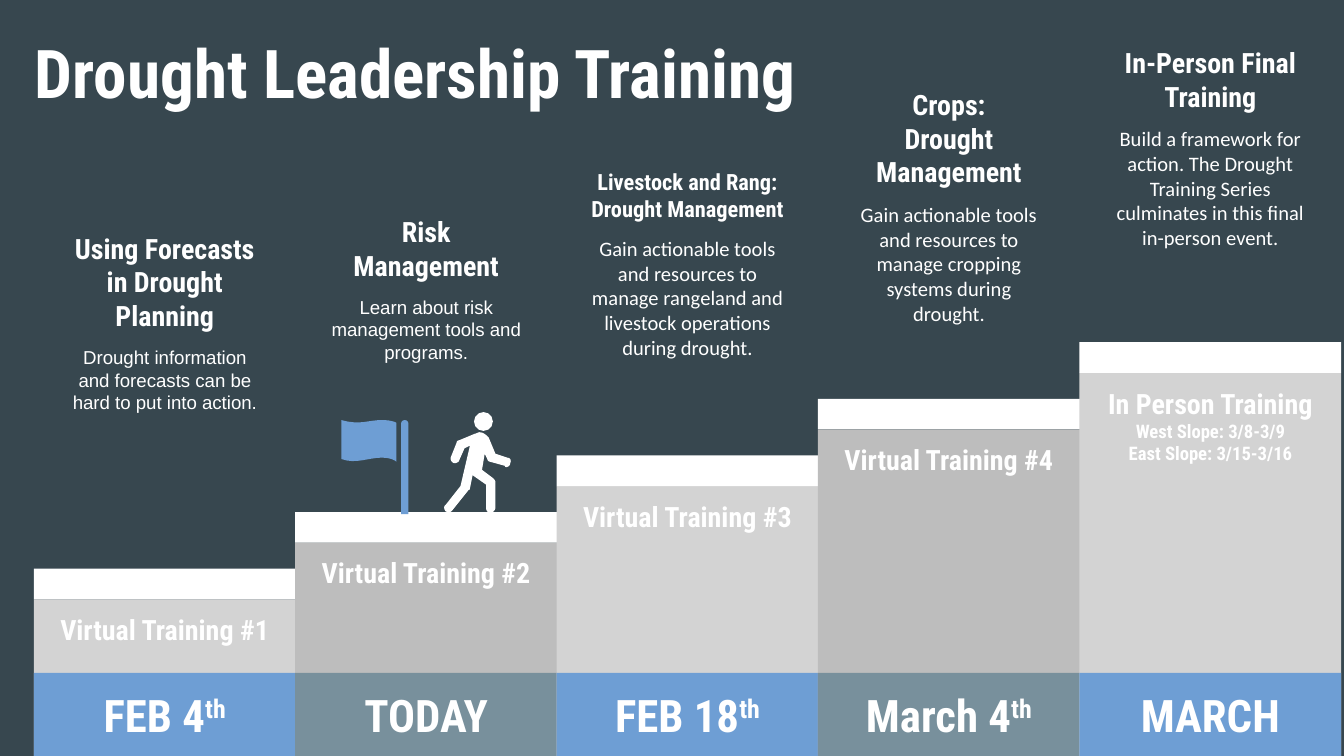
from pptx import Presentation
from pptx import util as u
from pptx.dml.color import RGBColor
from pptx.enum import shapes, text

Cm, Pt = u.Cm, u.Pt
SLATE = RGBColor(0x37, 0x47, 0x4F)
WHITE = RGBColor(0xFF, 0xFF, 0xFF)
LIGHT = RGBColor(0xD3, 0xD3, 0xD3)
GREY = RGBColor(0xBD, 0xBD, 0xBD)
BLUE = RGBColor(0x6E, 0x9E, 0xD4)
TEAL = RGBColor(0x78, 0x90, 0x9C)
ROBOTO = "Roboto Condensed"
RECT = shapes.MSO_SHAPE.RECTANGLE
TOP, MIDDLE, BOTTOM = (text.MSO_ANCHOR.TOP, text.MSO_ANCHOR.MIDDLE,
                       text.MSO_ANCHOR.BOTTOM)

# Staircase measures, in cm
SLIDE_W, SLIDE_H = 25.4, 14.29
LEFT, PITCH, STEP_W = 0.64, 4.94, 4.95
FIRST_TOP, RISE, CAP_H = 10.75, 1.07, 0.58
DATE_TOP = 12.72
CAPTION_INSET, CAPTION_W = 0.62, 3.71
HEAD_H, BODY_H = 0.93, 1.78

# Label lines, date, date suffix, heading top, heading lines, heading size,
# body, body font, body size
STEPS = [
    (["Virtual Training #1"], "FEB 4", "th", 5.48,
     ["Using Forecasts in Drought Planning"], 15,
     "Drought information and forecasts can be hard to put into action.",
     "Arial", 10),
    (["Virtual Training #2"], "TODAY", "", 4.53, ["Risk Management"], 15,
     "Learn about risk management tools and programs.", "Arial", 10),
    (["Virtual Training #3"], "FEB 18", "th", 3.4,
     ["Livestock and Rang:", "Drought Management"], 12,
     "Gain actionable tools and resources to manage rangeland and "
     "livestock operations during drought.", "Calibri", 11),
    (["Virtual Training #4"], "March 4", "th", 2.76,
     ["Crops:", "Drought Management"], 15,
     "Gain actionable tools and resources to manage cropping systems "
     "during drought.", "Calibri", 11),
    (["In Person Training", "West Slope: 3/8-3/9", "East Slope: 3/15-3/16"],
     "MARCH", "", 1.33, ["In-Person Final Training"], 15,
     "Build a framework for action. The Drought Training Series culminates "
     "in this final in-person event.", "Calibri", 11),
]

# Outlines on a 50-unit-wide grid: pairs are lines, sextuples are Bézier curves
WALKER = [
    (47, 34), (38, 31), (33, 19), (31, 17, 29, 15, 26, 15),
    (25, 15, 24, 16, 23, 16), (11, 21), (10, 21, 9, 22, 9, 23), (5, 33),
    (4, 35, 5, 37, 7, 38), (8, 38), (9, 38, 11, 37, 11, 36), (15, 27),
    (19, 25), (12, 55), (1, 69), (-1, 70, 0, 73, 1, 74),
    (2, 74, 2, 75, 3, 75), (4, 75, 5, 74, 6, 73), (18, 58),
    (19, 58, 19, 57, 19, 57), (21, 47), (31, 54), (31, 71),
    (31, 73, 32, 75, 34, 75), (36, 75, 38, 73, 38, 71), (38, 52),
    (38, 51, 37, 50, 36, 49), (28, 43), (30, 31), (32, 35),
    (32, 36, 33, 37, 34, 37), (45, 40), (45, 40, 45, 41, 46, 41),
    (47, 41, 49, 40, 49, 38), (50, 36, 49, 34, 47, 34),
]
CLOTH = [
    (30, 0), (38, 0, 41, 2, 41, 2), (41, 31), (41, 31, 38, 28, 30, 28),
    (20, 28, 11, 33, 0, 29), (0, 0), (14, 4, 20, 0, 30, 0),
]


def paint(sp, color):
    sp.shadow.inherit = False
    sp.fill.solid()
    sp.fill.fore_color.rgb = color
    sp.line.fill.background()


def add_block(parent, box, color, kind=RECT):
    sp = parent.add_shape(kind, *(Cm(v) for v in box))
    paint(sp, color)
    return sp


def set_frame(tf, anchor, side=0.25, top=0.13):
    tf.word_wrap = True
    tf.auto_size = text.MSO_AUTO_SIZE.NONE
    tf.vertical_anchor = anchor
    tf.margin_left = tf.margin_right = Cm(side)
    tf.margin_top, tf.margin_bottom = Cm(top), Cm(0.13)


def add_run(p, words, size, font=ROBOTO, bold=True):
    r = p.add_run()
    r.text = words
    r.font.size, r.font.name, r.font.bold = Pt(size), font, bold
    r.font.color.rgb = WHITE
    return r


def add_lines(tf, lines, sizes, font=ROBOTO, bold=True):
    for i, (line, size) in enumerate(zip(lines, sizes)):
        p = tf.add_paragraph() if i else tf.paragraphs[0]
        p.alignment = text.PP_ALIGN.CENTER
        add_run(p, line, size, font, bold)


def add_outline(parent, x, y, unit, outline, color):
    """Draw an outline, with each curve sampled as short segments."""
    points = [outline[0]]
    for seg in outline[1:]:
        if len(seg) == 2:
            points.append(seg)
            continue
        ctrl = [points[-1], seg[:2], seg[2:4], seg[4:]]
        for t in (k / 8 for k in range(1, 9)):
            weights = ((1 - t)**3, 3 * t * (1 - t)**2, 3 * t * t * (1 - t), t**3)
            points.append(tuple(sum(w * c[axis] for w, c in zip(weights, ctrl))
                                for axis in (0, 1)))
    points = [(Cm(x + px * unit), Cm(y + py * unit)) for px, py in points]
    fb = parent.build_freeform(*points[0])
    fb.add_line_segments(points[1:], close=True)
    paint(fb.convert_to_shape(), color)


def add_title(s, box):
    sp = s.shapes.title
    sp.left, sp.top, sp.width, sp.height = (Cm(v) for v in box)
    tf = sp.text_frame
    set_frame(tf, TOP)
    tf.margin_right = 0
    p = tf.paragraphs[0]
    p.alignment, p.line_spacing = text.PP_ALIGN.LEFT, 0.9
    add_run(p, "Drought Leadership Training", 36)


def add_step(s, x, top, labels, date, suffix, block_color, date_color):
    # Block with its label
    block_top = top + CAP_H
    sp = add_block(s.shapes, (x, block_top, STEP_W, SLIDE_H - block_top), block_color)
    set_frame(sp.text_frame, TOP, top=0.25)
    add_lines(sp.text_frame, labels, (15, 10, 10))
    # White tread
    add_block(s.shapes, (x, top, STEP_W, CAP_H), WHITE)
    # Date bar
    sp = add_block(s.shapes, (x, DATE_TOP, STEP_W, SLIDE_H - DATE_TOP), date_color)
    set_frame(sp.text_frame, MIDDLE)
    add_lines(sp.text_frame, [date], [24])
    if suffix:
        r = add_run(sp.text_frame.paragraphs[0], suffix, 24)
        r.font._element.set("baseline", "30000")


def add_caption(s, x, top, heading, head_size, body, font, body_size):
    group = s.shapes.add_group_shape().shapes
    for y, h, anchor, lines, size, face, bold in (
            (top, HEAD_H, BOTTOM, heading, head_size, ROBOTO, True),
            (top + HEAD_H, BODY_H, TOP, [body], body_size, font, False)):
        tf = group.add_textbox(Cm(x), Cm(y), Cm(CAPTION_W), Cm(h)).text_frame
        set_frame(tf, anchor, side=0)
        add_lines(tf, lines, [size] * len(lines), face, bold)


def add_walker(s, x, y, w):
    unit = w / 50
    group = s.shapes.add_group_shape().shapes
    add_block(group, (x + 22 * unit, y, 14 * unit, 14 * unit), WHITE,
              shapes.MSO_SHAPE.OVAL)
    add_outline(group, x, y, unit, WALKER, WHITE)


def add_flag(s, x, y, w):
    unit = w / 50
    group = s.shapes.add_group_shape().shapes
    pole = add_block(group, (x + 44.5 * unit, y, 5.5 * unit, 70 * unit), BLUE,
                     shapes.MSO_SHAPE.ROUND_2_SAME_RECTANGLE)
    pole.adjustments[0] = 0.5
    add_outline(group, x, y, unit, CLOTH, BLUE)


def main():
    prs = Presentation()
    prs.slide_width, prs.slide_height = Cm(SLIDE_W), Cm(SLIDE_H)
    s = prs.slides.add_slide(prs.slide_layouts[5])
    s.background.fill.solid()
    s.background.fill.fore_color.rgb = SLATE
    add_title(s, (0.41, 0.64, 15.32, 1.73))
    for i, (labels, date, suffix, head_top, *caption) in enumerate(STEPS):
        x = LEFT + i * PITCH
        colors = (GREY, TEAL) if i % 2 else (LIGHT, BLUE)
        add_step(s, x, FIRST_TOP - i * RISE, labels, date, suffix, *colors)
        add_caption(s, x + CAPTION_INSET, head_top, *caption)
    # Progress marker on the second step
    add_walker(s, 8.4, 7.79, 1.27)
    add_flag(s, 6.45, 7.94, 1.27)
    prs.save("out.pptx")


if __name__ == "__main__":
    main()
